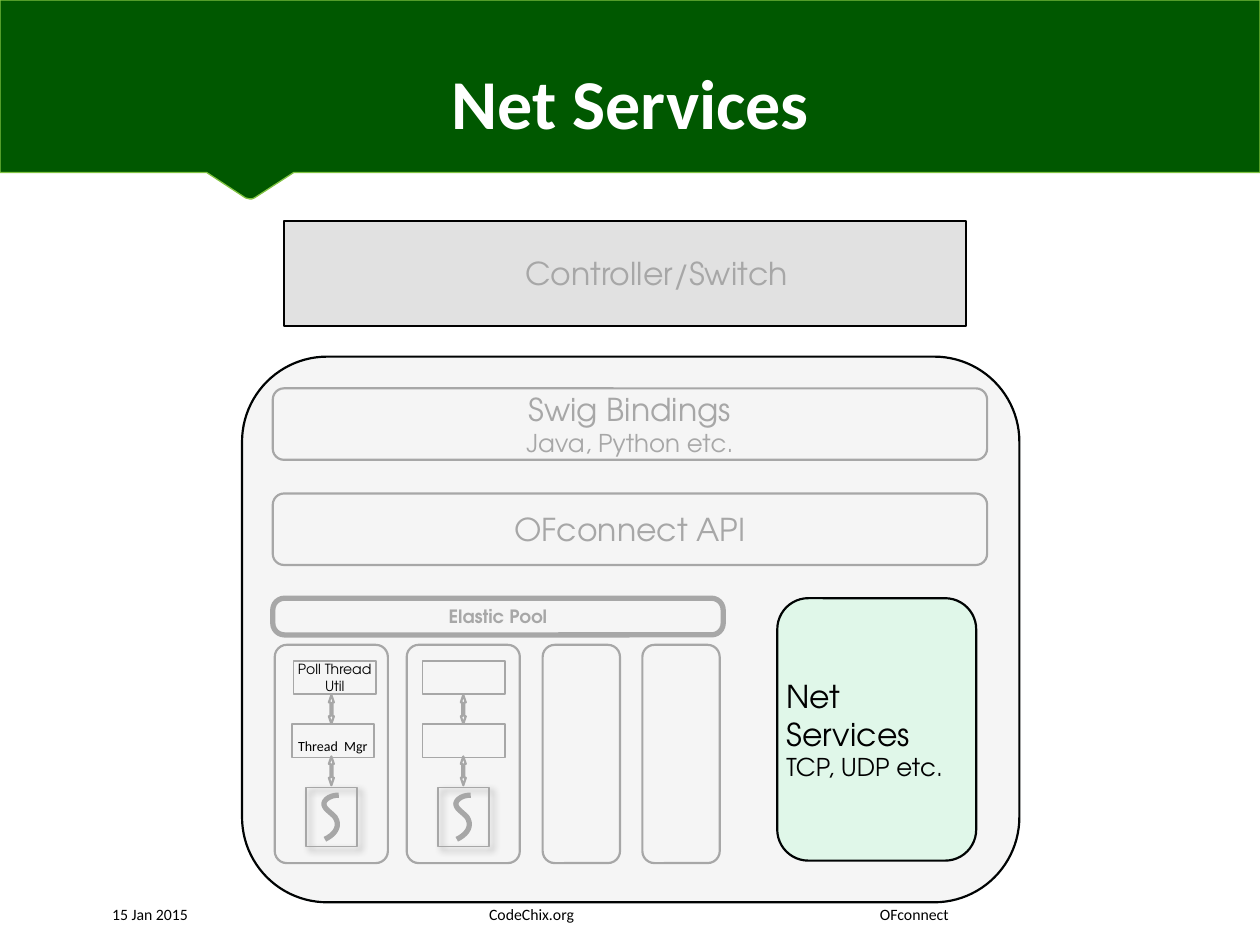
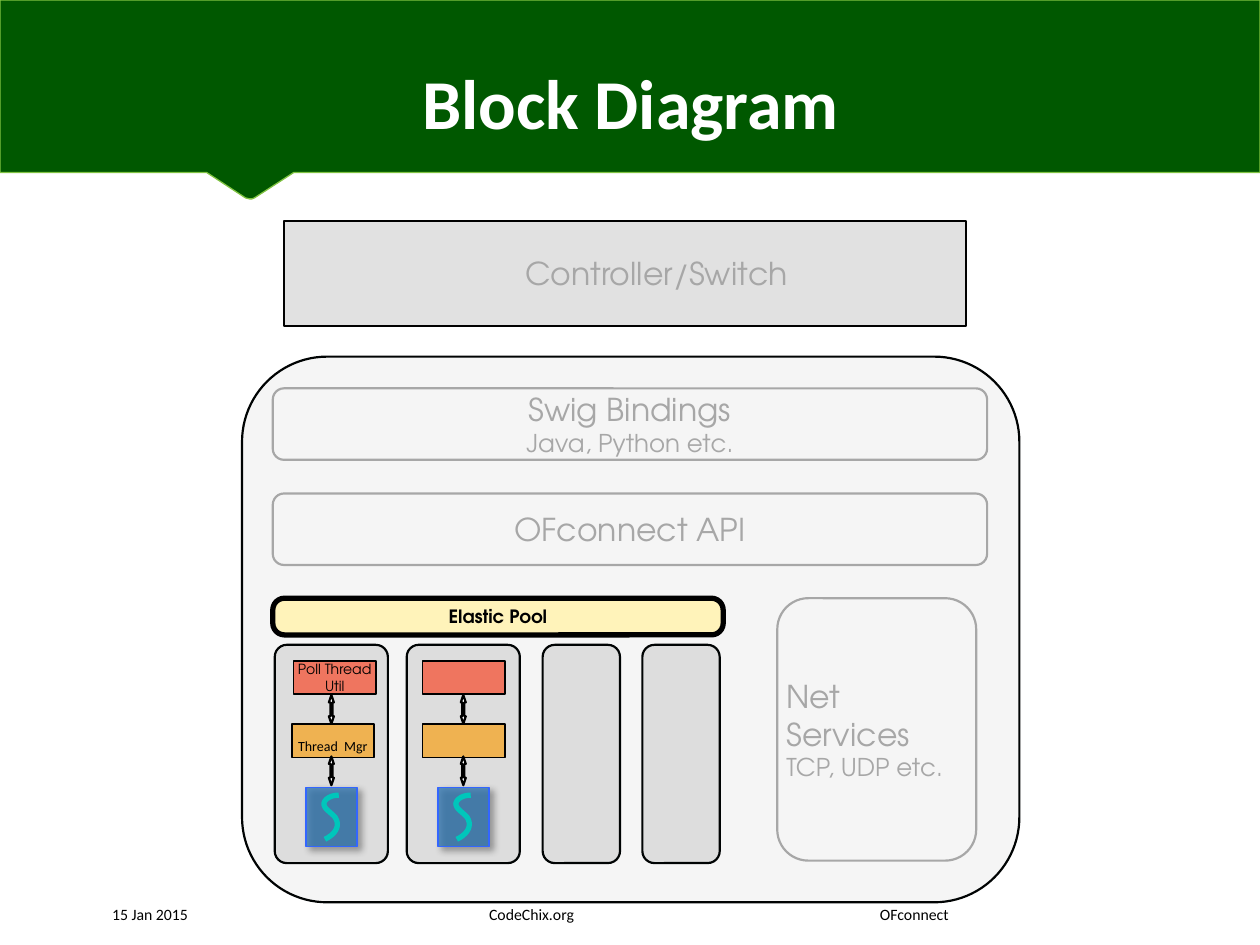
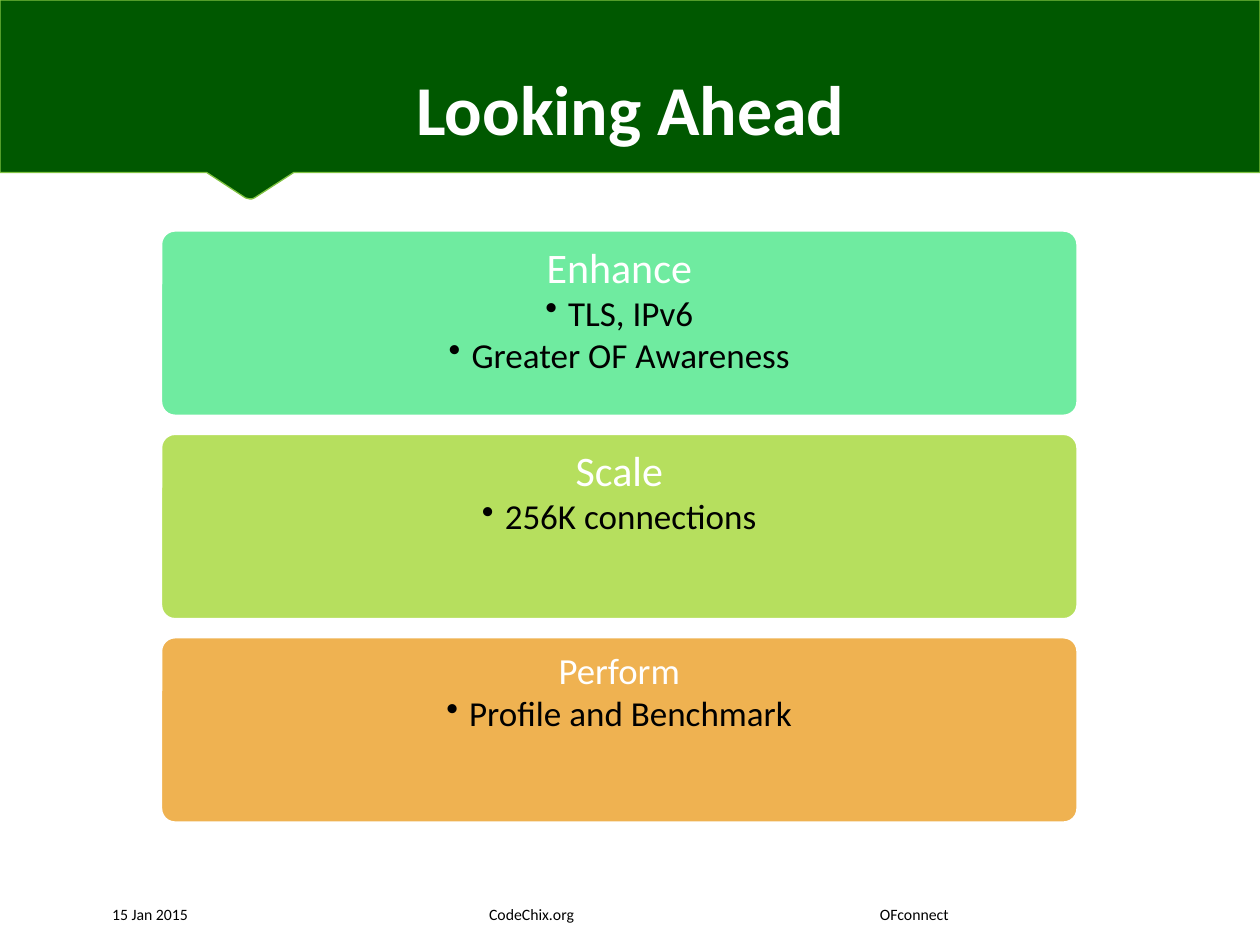
from typing import NamedTuple, Optional, Sequence

from lxml.etree import SubElement as Sub
from pptx import Presentation
from pptx.dml.color import RGBColor as RGB
from pptx.enum.shapes import MSO_SHAPE as Kind
from pptx.enum.text import MSO_ANCHOR as Anchor, PP_ALIGN as Align
from pptx.oxml.ns import qn
from pptx.shapes.autoshape import Shape
from pptx.slide import Slide
from pptx.util import Cm, Pt

BLACK = RGB(0x00, 0x00, 0x00)
INK = RGB(0x00, 0x03, 0x03)
WHITE = RGB(0xFF, 0xFF, 0xFF)
GREY = RGB(0xA7, 0xA7, 0xA7)
ASH = RGB(0xDD, 0xDD, 0xDD)
SLATE = RGB(0x53, 0x53, 0x53)
PALE = RGB(0xF2, 0xF2, 0xF2)
GREEN = RGB(0x00, 0x58, 0x00)
LEAF = RGB(0x80, 0xC3, 0x42)
MINT = RGB(0x6F, 0xEB, 0xA0)
DEW = RGB(0xE0, 0xF7, 0xE9)
LIME = RGB(0xB6, 0xDF, 0x5E)
AMBER = RGB(0xEF, 0xB2, 0x51)
CORAL = RGB(0xEF, 0x75, 0x5F)
CREAM = RGB(0xFF, 0xF3, 0xBA)
STEEL = RGB(0x29, 0x71, 0xAE)
BLUE = RGB(0x33, 0x66, 0xFF)
TEAL = RGB(0x00, 0xC6, 0xBB)

BODY = "Calibri"
TECH = "TeX Gyre Adventor"


class Box(NamedTuple):
    """Place and size in centimetres."""
    left: float
    top: float
    width: float
    height: float


class Paint(NamedTuple):
    fill: Optional[RGB] = None
    edge: Optional[RGB] = None
    width: float = 1.25
    alpha: int = 100


class Line(NamedTuple):
    """One paragraph; gap is the size of its first space when that differs."""
    text: str
    size: float
    color: RGB = BLACK
    font: str = TECH
    bold: bool = False
    gap: float = 0
    bullet: bool = False
    indent: float = 0


class Look(NamedTuple):
    """Paints of the diagram parts that change between slides."""
    net: Paint
    net_ink: RGB
    pool: Paint
    pool_ink: RGB
    column: Paint
    poll: Paint
    mgr: Paint
    arrow: Paint
    thread: Paint
    curl: RGB


class Stack(NamedTuple):
    left: float
    poll_left: float
    mgr_left: float
    poll: Sequence[Line] = ()
    mgr: Sequence[Line] = ()


class Card(NamedTuple):
    head: str
    size: float
    color: RGB
    points: Sequence[str]


FADED = Paint(edge=GREY)
THIN = FADED._replace(width=1)
SOLID = Paint(ASH, INK)

NET_LOOK = Look(
    net=Paint(DEW, INK), net_ink=BLACK,
    pool=FADED._replace(width=3), pool_ink=GREY,
    column=FADED, poll=THIN, mgr=THIN, arrow=FADED,
    thread=FADED._replace(width=0.75), curl=GREY)
POOL_LOOK = Look(
    net=FADED, net_ink=GREY,
    pool=Paint(CREAM, BLACK, 3), pool_ink=BLACK,
    column=SOLID, poll=Paint(CORAL, BLACK, 1), mgr=Paint(AMBER, BLACK, 1),
    arrow=Paint(WHITE, BLACK), thread=Paint(STEEL, BLUE, 0.75, 74), curl=TEAL)

STACKS = (
    Stack(8.2, 8.52, 8.52),
    Stack(5.54, 5.92, 5.88, [Line("Poll Thread Util", 8)],
          [Line("Thread Mgr", 8, font=BODY, gap=15)]),
)
SPARES = (10.94, 12.95)
COL_TOP, COL_WIDE, COL_HIGH, SPARE_WIDE = 13, 2.28, 4.4, 1.56

BAND = ((25.4, 0), (0, 0), (0, 3.48), (4.17, 3.48), (4.95, 3.99), (5.03, 4.01),
        (5.08, 4.01), (5.13, 3.99), (5.92, 3.48), (25.4, 3.48))
# Bézier curves of the thread mark, measured from the middle of its column
CURL = (
    ((0.15, 16.03), (0, 16.03), (-0.13, 16.1), (-0.15, 16.2)),
    ((-0.15, 16.2), (-0.15, 16.31), (0, 16.38), (0.08, 16.48)),
    ((0.08, 16.48), (0.18, 16.64), (0.1, 16.81), (-0.13, 16.92)),
)
STEPS = 10

CARDS = (
    Card("Enhance", 24, MINT, ("TLS, IPv6", "Greater OF Awareness")),
    Card("Scale", 24, LIME, ("256K connections",)),
    Card("Perform", 21, AMBER, ("Profile and Benchmark",)),
)
CARD_TOP, CARD_STEP = 4.65, 4.1


def coat(shape: Shape, paint: Paint) -> None:
    shape.shadow.inherit = False
    if paint.fill is None:
        shape.fill.background()
    else:
        shape.fill.solid()
        shape.fill.fore_color.rgb = paint.fill
        if paint.alpha < 100:
            tone = shape._element.spPr.find(qn("a:solidFill"))[0]
            Sub(tone, qn("a:alpha"), val=str(paint.alpha * 1000))
    if paint.edge is None:
        shape.line.fill.background()
    else:
        shape.line.color.rgb = paint.edge
        shape.line.width = Pt(paint.width)


def shade(effects, blur: float, dist: float, alpha: int) -> None:
    """Add a black shadow that falls to the lower right."""
    cast = Sub(effects, qn("a:outerShdw"), blurRad=str(Pt(blur)),
               dist=str(Pt(dist)), dir="2700000", algn="tl", rotWithShape="0")
    tone = Sub(cast, qn("a:srgbClr"), val="000000")
    Sub(tone, qn("a:alpha"), val=str(alpha * 1000))


def write(shape: Shape, lines: Sequence[Line], align: Align = Align.CENTER,
          anchor: Anchor = Anchor.MIDDLE, pad: float = 0) -> None:
    frame = shape.text_frame
    frame.word_wrap = True
    frame.vertical_anchor = anchor
    frame.margin_left = frame.margin_right = Cm(pad)
    frame.margin_top = frame.margin_bottom = Cm(pad)
    for i, line in enumerate(lines):
        para = frame.paragraphs[0] if i == 0 else frame.add_paragraph()
        para.alignment = align
        props = para._p.get_or_add_pPr()
        if line.indent:
            props.set("marL", str(Cm(line.indent)))
        if line.bullet:
            props.set("indent", str(-Cm(line.indent)))
            Sub(Sub(props, qn("a:buClr")), qn("a:srgbClr"), val=str(line.color))
            Sub(props, qn("a:buChar"), char="•")
        for part in line.text.partition(" ") if line.gap else [line.text]:
            para.add_run().text = part
        if line.gap:
            para.runs[1].font.size = Pt(line.gap)
        font = para.font
        font.name, font.size, font.bold = line.font, Pt(line.size), line.bold
        font.color.rgb = line.color


def block(slide: Slide, box: Box, paint: Paint, kind: Kind = Kind.RECTANGLE,
          adjust: Sequence[float] = ()) -> Shape:
    shape = slide.shapes.add_shape(kind, *map(Cm, box))
    for i, value in enumerate(adjust):
        shape.adjustments[i] = value
    coat(shape, paint)
    return shape


def round_box(slide: Slide, box: Box, paint: Paint,
              curve: float = 0.156) -> Shape:
    return block(slide, box, paint, Kind.ROUNDED_RECTANGLE, [curve])


def trace(slide: Slide, points: Sequence[tuple[float, float]], paint: Paint,
          close: bool) -> None:
    (x, y), *rest = [(Cm(a), Cm(b)) for a, b in points]
    pen = slide.shapes.build_freeform(x, y)
    pen.add_line_segments(rest, close=close)
    coat(pen.convert_to_shape(), paint)


def bend(curve: Sequence[tuple[float, float]], t: float) -> list[float]:
    """Point at t on a cubic Bézier curve."""
    s = 1 - t
    parts = (s ** 3, 3 * s * s * t, 3 * s * t * t, t ** 3)
    return [sum(k * v for k, v in zip(parts, axis)) for axis in zip(*curve)]


def draw_curl(slide: Slide, mid: float, color: RGB) -> None:
    points = [bend(curve, i / STEPS) for curve in CURL for i in range(STEPS + 1)]
    trace(slide, [(mid + x, y) for x, y in points], Paint(None, color, 3), False)


def draw_stack(slide: Slide, stack: Stack, look: Look) -> None:
    mid = stack.left + COL_WIDE / 2
    round_box(slide, Box(stack.left, COL_TOP, COL_WIDE, COL_HIGH),
              look.column, 0.106)
    for left, top, paint, lines in (
            (stack.poll_left, 13.32, look.poll, stack.poll),
            (stack.mgr_left, 14.6, look.mgr, stack.mgr)):
        write(block(slide, Box(left, top, 1.66, 0.67), paint), lines)
    for y in (14.3, 15.54):
        arrow = block(slide, Box(mid - 0.29, y - 0.05, 0.58, 0.1), look.arrow,
                      Kind.LEFT_RIGHT_ARROW, (0.41, 1.5))
        arrow.rotation = 90
    thread = block(slide, Box(mid - 0.51, 15.88, 1.03, 1.19), look.thread)
    shade(thread._element.spPr.find(qn("a:effectLst")), 4, 3, 43)
    draw_curl(slide, mid, look.curl)


def draw_blocks(slide: Slide, look: Look) -> None:
    round_box(slide, Box(4.88, 7.19, 15.67, 11), Paint(PALE, INK, alpha=71))
    net = round_box(slide, Box(15.67, 12.06, 4.01, 5.29), look.net)
    write(net, [Line("Net Services", 18, look.net_ink),
                Line("TCP, UDP etc.", 14, look.net_ink)], Align.LEFT)
    for stack in STACKS:
        draw_stack(slide, stack, look)
    pool = round_box(slide, Box(5.5, 12.06, 9.08, 0.74), look.pool, 0.318)
    write(pool, [Line("Elastic Pool", 10.5, look.pool_ink, bold=True)])
    for left in SPARES:
        round_box(slide, Box(left, COL_TOP, SPARE_WIDE, COL_HIGH), look.column)
    for top, lines in (
            (9.95, [Line("OFconnect API", 18, GREY)]),
            (7.83, [Line("Swig Bindings", 18, GREY),
                    Line("Java, Python etc.", 14, GREY)])):
        write(round_box(slide, Box(5.5, top, 14.4, 1.44), FADED), lines)
    switch = block(slide, Box(5.72, 4.45, 13.76, 2.12),
                   Paint(SLATE, BLACK, alpha=17))
    write(switch, [Line("Controller/Switch", 18, GREY, indent=1.27)], pad=0.13)


def draw_cards(slide: Slide) -> None:
    for i, card in enumerate(CARDS):
        box = Box(3.25, CARD_TOP + i * CARD_STEP, 18.47, 3.73)
        shape = round_box(slide, box, Paint(card.color, WHITE), 0.075)
        points = [Line(text, 20, font=BODY, bullet=True, indent=0.46)
                  for text in card.points]
        write(shape, [Line(card.head, card.size, WHITE, BODY), *points],
              anchor=Anchor.TOP, pad=0.13)


def draw_title(slide: Slide, text: str, pad: float) -> None:
    title = slide.shapes.add_textbox(*map(Cm, Box(2.26, 0, 20.9, 3.02)))
    write(title, [Line(text, 40, WHITE, BODY, True)], anchor=Anchor.BOTTOM, pad=pad)
    run = title.text_frame.paragraphs[0].runs[0]
    shade(Sub(run._r.get_or_add_rPr(), qn("a:effectLst")), 4, 3, 43)


def draw_footer(slide: Slide) -> None:
    foot = slide.shapes.add_textbox(*map(Cm, Box(2.26, 17.98, 17.48, 0.64)))
    props = foot.text_frame.paragraphs[0]._p.get_or_add_pPr()
    tabs = Sub(props, qn("a:tabLst"))
    for stop in (7.6, 15.48):
        Sub(tabs, qn("a:tab"), pos=str(Cm(stop)), algn="l")
    write(foot, [Line("15 Jan 2015\tCodeChix.org\tOFconnect", 9, font=BODY)],
          Align.LEFT, Anchor.BOTTOM)


def main() -> None:
    deck = Presentation()
    deck.slide_width, deck.slide_height = Cm(25.4), Cm(19.05)
    for text, look, pad in (("Net Services", NET_LOOK, 0.13),
                            ("Block Diagram", POOL_LOOK, 0.13),
                            ("Looking Ahead", None, 0)):
        slide = deck.slides.add_slide(deck.slide_layouts[6])
        trace(slide, BAND, Paint(GREEN, LEAF, 0.75), True)
        if look:
            draw_blocks(slide, look)
        else:
            draw_cards(slide)
        draw_title(slide, text, pad)
        draw_footer(slide)
    deck.save("out.pptx")


if __name__ == "__main__":
    main()
